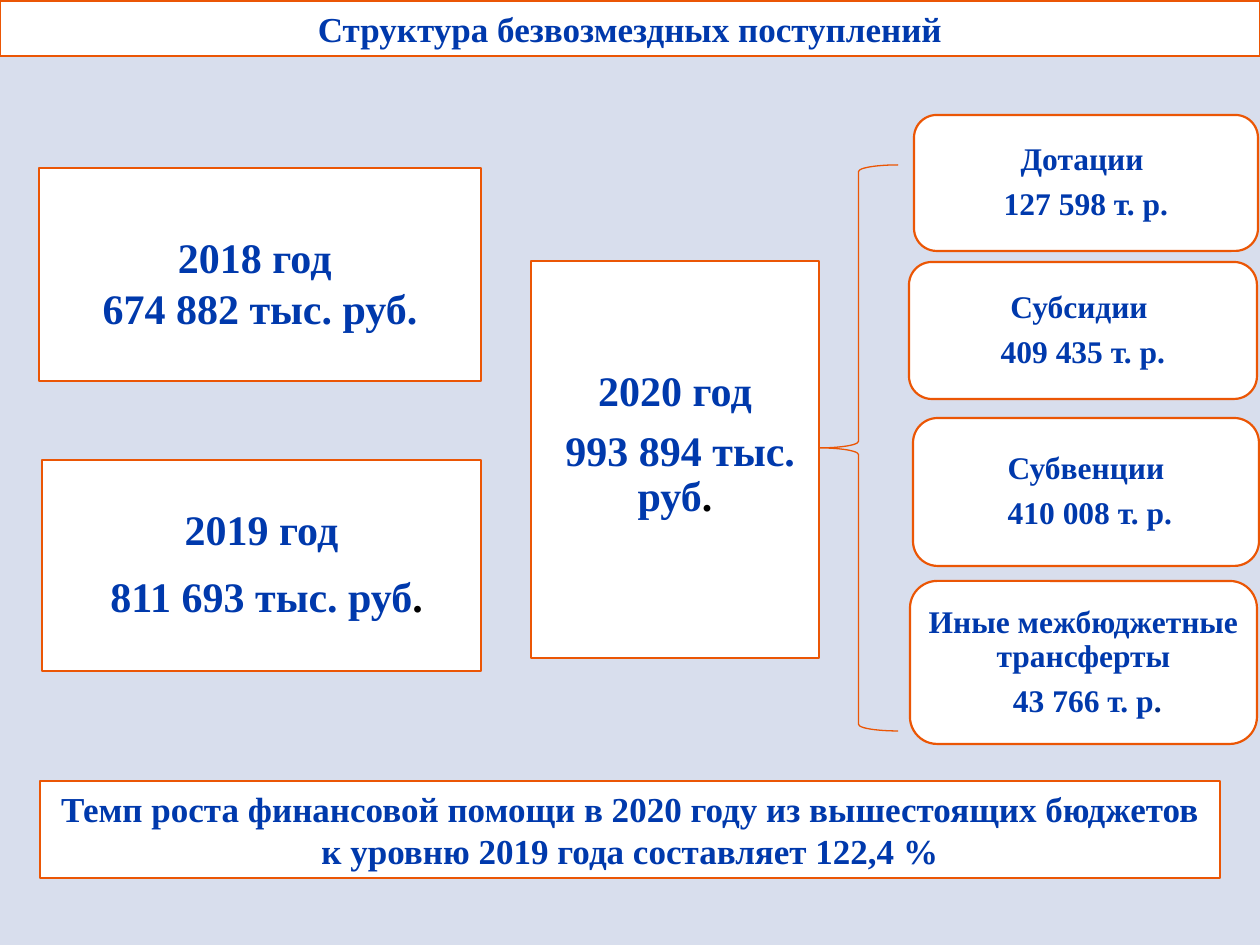
from dataclasses import dataclass

from pptx import Presentation
from pptx.dml.color import RGBColor
from pptx.enum.shapes import MSO_SHAPE
from pptx.enum.text import MSO_ANCHOR, MSO_AUTO_SIZE, PP_ALIGN
from pptx.util import Pt

PX = 914400 / 126


@dataclass
class Theme:
    background: RGBColor = RGBColor(0xD8, 0xDE, 0xED)
    panel: RGBColor = RGBColor(0xFF, 0xFF, 0xFF)
    border: RGBColor = RGBColor(0xEB, 0x56, 0x05)
    text: RGBColor = RGBColor(0x00, 0x39, 0xAC)
    dark_blue: RGBColor = RGBColor(0x00, 0x2B, 0x82)
    black: RGBColor = RGBColor(0, 0, 0)
    font: str = "Times New Roman"
    heading_size: int = 20
    year_size: int = 24
    card_size: int = 18


theme = Theme()


def px(value):
    return round(value * PX)


def fill_panel(shape, lines, size, margins, anchor=MSO_ANCHOR.MIDDLE,
               line_spacing=1.0, space_after=0, dot_color=None):
    """Style a panel and write its lines, with an optional coloured final dot."""
    shape.fill.solid()
    shape.fill.fore_color.rgb = theme.panel
    shape.line.color.rgb = theme.border
    shape.line.width = Pt(1.25)
    frame = shape.text_frame
    frame.word_wrap = True
    frame.auto_size = MSO_AUTO_SIZE.NONE
    frame.vertical_anchor = anchor
    (frame.margin_left, frame.margin_top,
     frame.margin_right, frame.margin_bottom) = map(px, margins)
    frame.text = "\n".join(lines)
    if dot_color is not None:
        frame.paragraphs[-1].add_run().text = "."
    for paragraph in frame.paragraphs:
        paragraph.alignment = PP_ALIGN.CENTER
        paragraph.line_spacing = line_spacing
        paragraph.space_after = Pt(space_after)
        for run in paragraph.runs:
            run.font.name = theme.font
            run.font.size = Pt(size)
            run.font.bold = True
            run.font.color.rgb = theme.text
    if dot_color is not None:
        frame.paragraphs[-1].runs[-1].font.color.rgb = dot_color


presentation = Presentation()
presentation.slide_width, presentation.slide_height = px(1260), px(945)
slide = presentation.slides.add_slide(presentation.slide_layouts[5])
slide.background.fill.solid()
slide.background.fill.fore_color.rgb = theme.background

# Title band
title = slide.shapes.title
title.left, title.top, title.width, title.height = map(px, (0, 1, 1260, 55))
fill_panel(title, ["Структура безвозмездных поступлений"],
           theme.heading_size, (13, 6, 13, 6))

# Transfer types of 2020
cards = [
    ((914, 115, 344, 136), ["Дотации ", "127 598 т. р."], None),
    ((909, 262, 348, 137), ["Субсидии ", "409 435 т. р."], None),
    ((913, 418, 346, 148), ["Субвенции", " 410 008 т. р."], None),
    ((910, 581, 347, 163),
     ["Иные межбюджетные трансферты", " 43 766 т. р"], theme.dark_blue),
]
for bounds, lines, dot_color in cards:
    card = slide.shapes.add_shape(MSO_SHAPE.ROUNDED_RECTANGLE, *map(px, bounds))
    card.shadow.inherit = False
    fill_panel(card, lines, theme.card_size, (7, 5, 7, 5),
               line_spacing=0.9, space_after=6.3, dot_color=dot_color)

# Yearly totals
years = [
    ((39, 168, 442, 213), ["2018 год ", "674 882 тыс. руб."],
     (13, 64, 13, 6), MSO_ANCHOR.TOP, 1.0, 0, None),
    ((42, 460, 439, 211), ["2019 год", " 811 693 тыс. руб"],
     (9, 9, 9, 9), MSO_ANCHOR.MIDDLE, 0.9, 12, theme.black),
    ((531, 261, 288, 397), ["2020 год", " 993 894 тыс. руб"],
     (13, 109, 13, 6), MSO_ANCHOR.TOP, 0.9, 8.4, theme.black),
]
for bounds, lines, margins, anchor, spacing, after, dot_color in years:
    panel = slide.shapes.add_shape(MSO_SHAPE.RECTANGLE, *map(px, bounds))
    panel.shadow.inherit = False
    fill_panel(panel, lines, theme.year_size, margins, anchor,
               spacing, after, dot_color)

# Brace from the 2020 total to its parts
brace = slide.shapes.add_shape(MSO_SHAPE.LEFT_BRACE, *map(px, (819, 165, 79, 566)))
brace.shadow.inherit = False
brace.fill.background()
brace.line.color.rgb = theme.border
brace.line.width = Pt(0.75)

# Growth conclusion
conclusion = slide.shapes.add_shape(MSO_SHAPE.RECTANGLE, *map(px, (40, 781, 1180, 97)))
conclusion.shadow.inherit = False
fill_panel(conclusion,
           ["Темп роста финансовой помощи в 2020 году из вышестоящих бюджетов "
            "к уровню 2019 года составляет 122,4 %"],
           theme.heading_size, (13, 6, 13, 6))

presentation.save("out.pptx")
